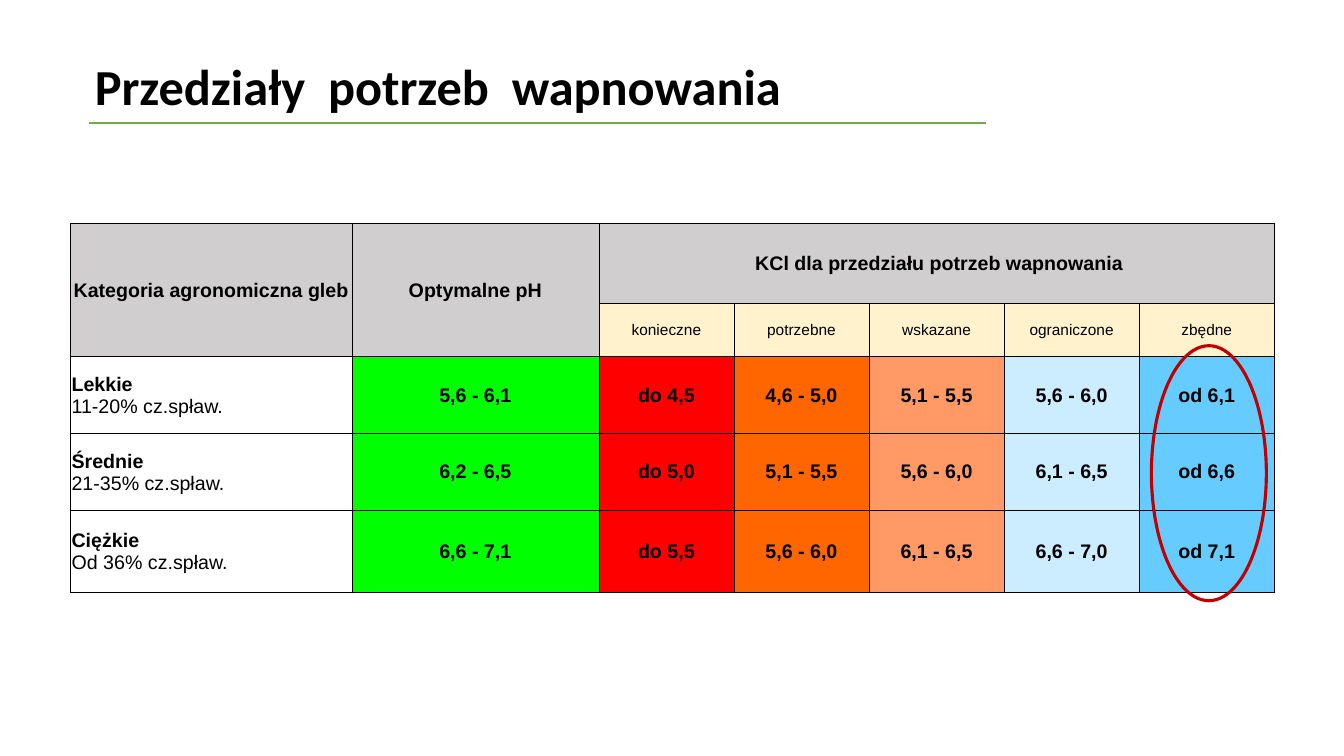
from dataclasses import dataclass

from lxml import etree
from pptx import Presentation
from pptx.dml.color import RGBColor
from pptx.enum.shapes import MSO_CONNECTOR, MSO_SHAPE
from pptx.enum.text import MSO_ANCHOR, MSO_AUTO_SIZE, PP_ALIGN
from pptx.oxml.ns import qn
from pptx.slide import Slide
from pptx.table import Table, _Cell
from pptx.util import Inches, Pt

LEFT, CENTER = PP_ALIGN.LEFT, PP_ALIGN.CENTER
MIDDLE = MSO_ANCHOR.MIDDLE
NO_AUTOFIT = MSO_AUTO_SIZE.NONE
STRAIGHT = MSO_CONNECTOR.STRAIGHT
OVAL = MSO_SHAPE.OVAL
TITLE_ONLY = 5


@dataclass(frozen=True)
class Theme:
    title_font: str = "Calibri"
    table_font: str = "Arial"
    title_size: float = 36
    body_size: float = 14
    label_size: float = 11
    outer_border: float = 1
    inner_border: float = 0.5
    text: str = "000000"
    rule: str = "70AD47"
    header: str = "D0CECE"
    label: str = "FFF2CC"
    optimum: str = "00FF00"
    ring: str = "C00000"


THEME = Theme()


@dataclass(frozen=True)
class Need:
    label: str
    color: str
    ranges: tuple[str, str, str]


@dataclass(frozen=True)
class Soil:
    name: str
    content: str
    optimum: str


@dataclass(frozen=True)
class CellStyle:
    fill: str | None
    size: float = THEME.body_size
    bold: bool = True
    align: PP_ALIGN = CENTER


SOILS = [
    Soil("Lekkie", "11-20% cz.spław.", "5,6 - 6,1"),
    Soil("Średnie", "21-35% cz.spław.", "6,2 - 6,5"),
    Soil("Ciężkie", "Od 36% cz.spław.", "6,6 - 7,1"),
]
NEEDS = [
    Need("konieczne", "FF0000", ("do 4,5", "do 5,0", "do 5,5")),
    Need("potrzebne", "FF6600", ("4,6 - 5,0", "5,1 - 5,5", "5,6 - 6,0")),
    Need("wskazane", "FF9966", ("5,1 - 5,5", "5,6 - 6,0", "6,1 - 6,5")),
    Need("ograniczone", "CCECFF", ("5,6 - 6,0", "6,1 - 6,5", "6,6 - 7,0")),
    Need("zbędne", "66CCFF", ("od 6,1", "od 6,6", "od 7,1")),
]
COLUMN_WIDTHS = [2.79, 2.45] + [1.34] * len(NEEDS)
ROW_HEIGHTS = [0.79, 0.53, 0.76, 0.76, 0.82]

HEADER = CellStyle(THEME.header)
LABEL = CellStyle(THEME.label, THEME.label_size, bold=False)
SOIL = CellStyle(None, align=LEFT)


def color(value: str) -> RGBColor:
    return RGBColor.from_string(value)


def add_title(page: Slide, text: str) -> None:
    title = page.shapes.title
    title.left, title.top = Inches(0.84), Inches(0.53)
    title.width, title.height = Inches(9), Inches(0.71)
    frame = title.text_frame
    frame.text = text
    frame.word_wrap = True
    frame.auto_size = NO_AUTOFIT
    frame.vertical_anchor = MIDDLE
    para = frame.paragraphs[0]
    para.alignment = LEFT
    para.line_spacing = 0.9
    font = para.runs[0].font
    font.name, font.size, font.bold = THEME.title_font, Pt(THEME.title_size), True
    font.color.rgb = color(THEME.text)


def add_rule(page: Slide) -> None:
    rule = page.shapes.add_connector(
        STRAIGHT, Inches(9.78), Inches(1.22), Inches(0.88), Inches(1.22))
    rule.line.color.rgb = color(THEME.rule)
    rule.line.width = Pt(2)
    etree.SubElement(rule._element.spPr, qn("a:effectLst"))


def fill_cell(cell: _Cell, text: str, style: CellStyle) -> None:
    cell.margin_left = cell.margin_right = cell.margin_top = Inches(0.01)
    cell.margin_bottom = 0
    cell.vertical_anchor = MIDDLE
    if style.fill:
        cell.fill.solid()
        cell.fill.fore_color.rgb = color(style.fill)
    else:
        cell.fill.background()
    para = cell.text_frame.paragraphs[0]
    para.text = text
    para.alignment = style.align
    for index, span in enumerate(para.runs):
        span.font.name, span.font.size = THEME.table_font, Pt(style.size)
        span.font.bold = style.bold and index == 0
        span.font.color.rgb = color(THEME.text)


def add_borders(table: Table) -> None:
    last_row, last_column = len(ROW_HEIGHTS) - 1, len(COLUMN_WIDTHS) - 1
    for row in range(last_row + 1):
        for column in range(last_column + 1):
            properties = table.cell(row, column)._tc.get_or_add_tcPr()
            outer_sides = [
                ("a:lnL", column == 0),
                ("a:lnR", column == last_column),
                ("a:lnT", row == 0),
                ("a:lnB", row == last_row),
            ]
            for position, (tag, outer) in enumerate(outer_sides):
                width = THEME.outer_border if outer else THEME.inner_border
                border = etree.Element(qn(tag), w=str(Pt(width)))
                fill = etree.SubElement(border, qn("a:solidFill"))
                etree.SubElement(fill, qn("a:srgbClr"), val=THEME.text)
                properties.insert(position, border)


def add_needs_table(page: Slide) -> None:
    table = page.shapes.add_table(
        len(ROW_HEIGHTS), len(COLUMN_WIDTHS), Inches(0.7), Inches(2.22),
        Inches(sum(COLUMN_WIDTHS)), Inches(sum(ROW_HEIGHTS))).table
    table.first_row = table.horz_banding = False
    for column, width in zip(table.columns, COLUMN_WIDTHS):
        column.width = Inches(width)
    for row, height in zip(table.rows, ROW_HEIGHTS):
        row.height = Inches(height)

    for column in range(2):
        table.cell(0, column).merge(table.cell(1, column))
    table.cell(0, 2).merge(table.cell(0, len(COLUMN_WIDTHS) - 1))
    headings = ["Kategoria agronomiczna gleb", "Optymalne pH",
                " KCl dla przedziału potrzeb wapnowania"]
    for column, heading in enumerate(headings):
        fill_cell(table.cell(0, column), heading, HEADER)

    for row, soil in enumerate(SOILS, start=2):
        fill_cell(table.cell(row, 0), f"{soil.name}\v{soil.content}", SOIL)
        fill_cell(table.cell(row, 1), soil.optimum, CellStyle(THEME.optimum))
    for column, need in enumerate(NEEDS, start=2):
        fill_cell(table.cell(1, column), need.label, LABEL)
        for row, value in enumerate(need.ranges, start=2):
            fill_cell(table.cell(row, column), value, CellStyle(need.color))
    add_borders(table)


def add_ring(page: Slide) -> None:
    ring = page.shapes.add_shape(
        OVAL, Inches(11.42), Inches(3.43), Inches(1.14), Inches(2.53))
    ring.shadow.inherit = False
    ring.fill.background()
    ring.line.color.rgb = color(THEME.ring)
    ring.line.width = Pt(2.25)


def main() -> None:
    deck = Presentation()
    deck.slide_width, deck.slide_height = Inches(13.33), Inches(7.5)
    page = deck.slides.add_slide(deck.slide_layouts[TITLE_ONLY])
    add_rule(page)
    add_title(page, "Przedziały  potrzeb  wapnowania")
    add_needs_table(page)
    add_ring(page)
    deck.save("out.pptx")


if __name__ == "__main__":
    main()
